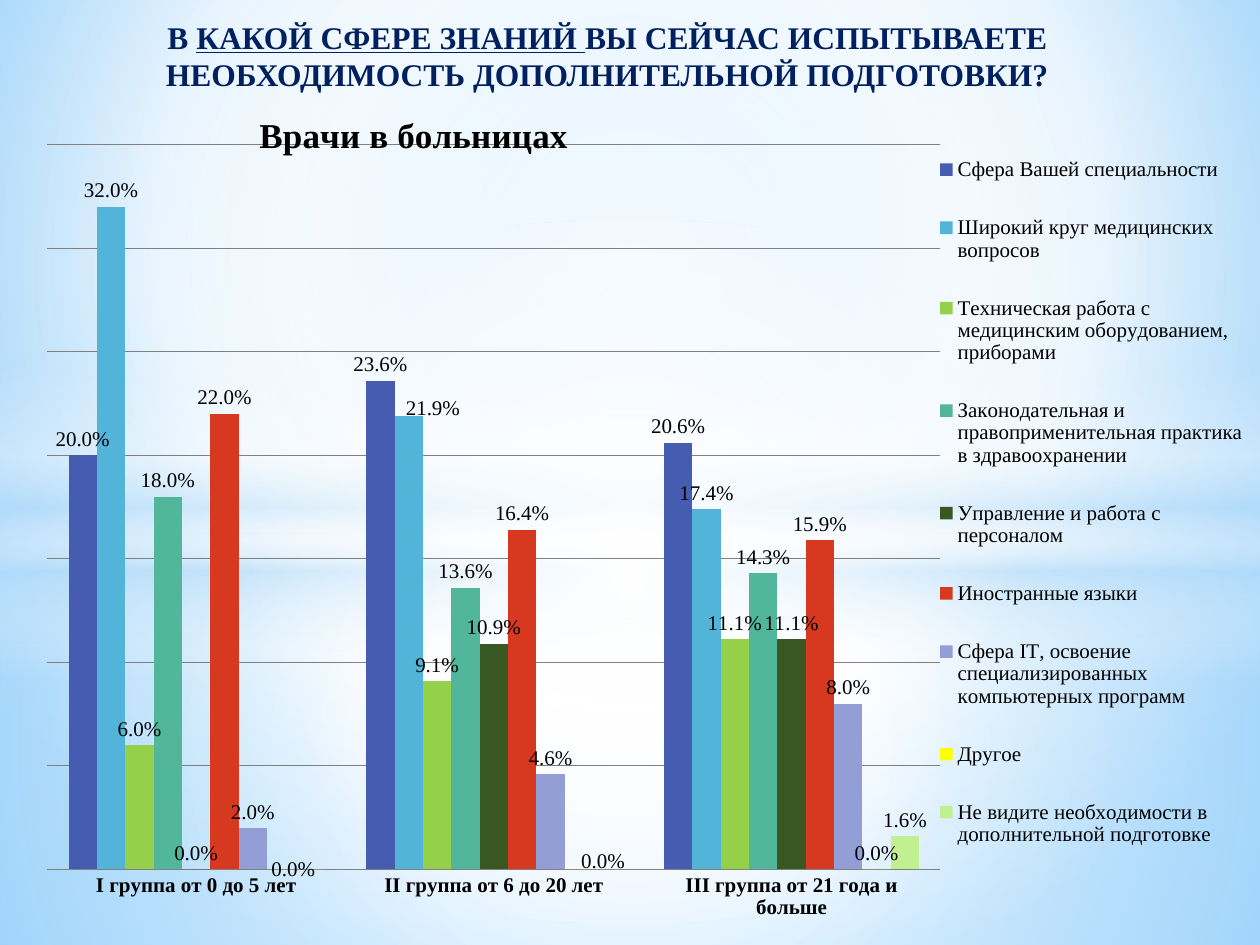
from lxml.etree import SubElement
from pptx import Presentation
from pptx.chart.data import CategoryChartData
from pptx.dml.color import RGBColor
from pptx.enum.chart import XL_CHART_TYPE, XL_LABEL_POSITION, XL_LEGEND_POSITION, XL_TICK_MARK
from pptx.enum.shapes import MSO_SHAPE
from pptx.enum.text import PP_ALIGN
from pptx.oxml import parse_xml
from pptx.oxml.ns import nsdecls, qn
from pptx.util import Cm, Pt

FONT = "Times New Roman"
NAVY, BLACK, GREY = "002060", "000000", "808080"
WHITE, PALE_BLUE = "FFFFFF", "B4DCFA"

CATEGORIES = ["I группа от 0 до 5 лет", "II группа от 6 до 20 лет", "III группа от 21 года и больше"]
SERIES = [
    ("Сфера Вашей специальности", "465CB1", (0.2, 0.236, 0.206)),
    ("Широкий круг медицинских вопросов", "52B4D8", (0.32, 0.219, 0.174)),
    ("Техническая работа с медицинским оборудованием, приборами", "94D04A", (0.06, 0.091, 0.111)),
    ("Законодательная и правоприменительная практика в здравоохранении", "52B69A", (0.18, 0.136, 0.143)),
    ("Управление и работа с персоналом", "385723", (0, 0.109, 0.111)),
    ("Иностранные языки", "D73820", (0.22, 0.164, 0.159)),
    ("Сфера IT, освоение специализированных компьютерных программ", "939DD6", (0.02, 0.046, 0.08)),
    ("Другое", "FFFF00", (0, 0, 0)),
    ("Не видите необходимости в дополнительной подготовке", "C1F090", (0, 0, 0.016)),
]
# (series, category): shift as a share of the chart size
MOVED_LABELS = {(1, 1): (0.02, 0.01), (7, 0): (0.01, 0.02), (7, 1): (0.02, 0.01)}
HIDDEN_LABELS = [(8, 0), (8, 1)]


def color(hex_string):
    return RGBColor.from_string(hex_string)


def format_font(font, size=12, hex_color=BLACK, bold=False, underline=None):
    font.name, font.size, font.bold, font.underline = FONT, Pt(size), bold, underline
    font.color.rgb = color(hex_color)


def add_text(paragraph, text, **font_format):
    run = paragraph.add_run()
    run.text = text
    format_font(run.font, **font_format)


def set_gradient(properties, stops, center=None):
    """Swap the solid fill for a gradient: radial around center, else top to bottom."""
    stop_xml = "".join(
        f'<a:gs pos="{position * 1000}"><a:srgbClr val="{hex_color}">'
        f'<a:alpha val="{opacity * 1000}"/></a:srgbClr></a:gs>'
        for position, hex_color, opacity in stops)
    if center:
        sides = " ".join(f'{side}="{share * 1000}"' for side, share in zip("ltrb", center))
        direction = f'<a:path path="circle"><a:fillToRect {sides}/></a:path>'
    else:
        direction = '<a:lin ang="5400000" scaled="0"/>'
    solid_fill = properties.find(qn("a:solidFill"))
    properties.replace(solid_fill, parse_xml(
        f'<a:gradFill {nsdecls("a")} rotWithShape="1"><a:gsLst>{stop_xml}</a:gsLst>{direction}</a:gradFill>'))


def set_layout(element, index, **values):
    """Give a chart part a manual layout, placed as child number index."""
    for old_layout in element.findall(qn("c:layout")):
        element.remove(old_layout)
    layout = parse_xml(f'<c:layout {nsdecls("c")}><c:manualLayout/></c:layout>')
    for name, value in values.items():
        SubElement(layout[0], qn(f"c:{name}")).set("val", str(value))
    element.insert(index, layout)


class SlideBuilder:
    def __init__(self, presentation):
        self.slide = presentation.slides.add_slide(presentation.slide_layouts[6])

    def background(self, stops, center):
        self.slide.background.fill.solid()
        set_gradient(self.slide.background._element.find(f".//{qn('p:bgPr')}"), stops, center)

    def glow(self, kind, top, height, stops, center=None):
        shape = self.slide.shapes.add_shape(kind, 0, Cm(top), Cm(25.4), Cm(height))
        shape.shadow.inherit = False
        shape.line.fill.background()
        shape.fill.solid()
        set_gradient(shape._element.spPr, stops, center)

    def heading(self, left, top, width, height, parts):
        frame = self.slide.shapes.add_textbox(Cm(left), Cm(top), Cm(width), Cm(height)).text_frame
        frame.word_wrap = True
        paragraph = frame.paragraphs[0]
        paragraph.alignment = PP_ALIGN.CENTER
        for text, underline in parts:
            add_text(paragraph, text, size=18, hex_color=NAVY, bold=True, underline=underline)

    def column_chart(self, left, top, width, height, title):
        data = CategoryChartData(number_format="0.0%")
        data.categories = CATEGORIES
        for name, _, values in SERIES:
            data.add_series(name, values)
        chart = self.slide.shapes.add_chart(
            XL_CHART_TYPE.COLUMN_CLUSTERED, Cm(left), Cm(top), Cm(width), Cm(height), data).chart
        format_font(chart.font)
        add_text(chart.chart_title.text_frame.paragraphs[0], title, size=20, bold=True)
        set_layout(chart.chart_title._element, 1, xMode="edge", yMode="edge", x=0.17, y=0.01)
        set_layout(chart._chartSpace.chart.plotArea, 0, layoutTarget="inner", xMode="edge", yMode="edge",
                   x=0, y=0.057, w=0.738, h=0.888)
        self.axes(chart)
        self.legend(chart)
        plot = chart.plots[0]
        plot.gap_width, plot.overlap, plot.vary_by_categories = 150, 0, False
        for series, (_, hex_color, _) in zip(plot.series, SERIES):
            series.format.fill.solid()
            series.format.fill.fore_color.rgb = color(hex_color)
            labels = series.data_labels
            labels.show_value = True
            labels.position = XL_LABEL_POSITION.OUTSIDE_END
            labels.number_format, labels.number_format_is_linked = "0.0%", False
        for (series_index, point_index), (x, y) in MOVED_LABELS.items():
            set_layout(self.point_label(plot, series_index, point_index), 1, x=x, y=y)
        for series_index, point_index in HIDDEN_LABELS:
            label = self.point_label(plot, series_index, point_index)
            for child in label[1:]:
                label.remove(child)
            SubElement(label, qn("c:delete")).set("val", "1")

    def axes(self, chart):
        value_axis, category_axis = chart.value_axis, chart.category_axis
        value_axis.minimum_scale, value_axis.maximum_scale, value_axis.major_unit = 0, 0.35, 0.05
        value_axis.visible = False
        value_axis.has_major_gridlines = True
        format_font(category_axis.tick_labels.font, bold=True)
        category_axis.major_tick_mark = XL_TICK_MARK.NONE
        for line in (value_axis.major_gridlines.format.line, category_axis.format.line):
            line.color.rgb = color(GREY)
            line.width = Pt(0.75)

    def legend(self, chart):
        chart.has_legend = True
        chart.legend.position = XL_LEGEND_POSITION.RIGHT
        chart.legend.include_in_layout = False
        format_font(chart.legend.font)
        set_layout(chart.legend._element, 1, xMode="edge", yMode="edge", x=0.75, y=0.03, w=0.25, h=0.93)

    def point_label(self, plot, series_index, point_index):
        """Return the XML element of one point's own label."""
        series = plot.series[series_index]
        series.points[point_index].data_label.position = XL_LABEL_POSITION.OUTSIDE_END
        return series._element.xpath(f"c:dLbls/c:dLbl[c:idx/@val='{point_index}']")[0]


def main():
    presentation = Presentation()
    presentation.slide_width, presentation.slide_height = Cm(25.4), Cm(19.05)
    builder = SlideBuilder(presentation)
    middle = (50, 50, 50, 50)
    builder.background([(0, "9ED5FF", 100), (60, WHITE, 100), (100, "5BB9FF", 100)], (20, 10, 20, 60))
    builder.glow(MSO_SHAPE.RECTANGLE, 10.74, 8.31,
                 [(0, WHITE, 91), (37, WHITE, 76), (100, PALE_BLUE, 79)], middle)
    builder.glow(MSO_SHAPE.RECTANGLE, 0, 10.74,
                 [(0, WHITE, 89), (48, WHITE, 62), (100, PALE_BLUE, 79)], middle)
    builder.glow(MSO_SHAPE.RECTANGLE, 7.37, 6.35,
                 [(0, WHITE, 0), (29, WHITE, 30), (45, PALE_BLUE, 40),
                  (55, WHITE, 26), (65, PALE_BLUE, 60), (100, WHITE, 0)])
    builder.glow(MSO_SHAPE.OVAL, 4.45, 14.17, [(0, WHITE, 100), (54, WHITE, 0)], middle)
    builder.heading(1.5, 0.23, 21.49, 1.8, [
        ("В ", False),
        ("КАКОЙ СФЕРЕ ЗНАНИЙ ", True),
        ("ВЫ СЕЙЧАС ИСПЫТЫВАЕТЕ НЕОБХОДИМОСТЬ ДОПОЛНИТЕЛЬНОЙ ПОДГОТОВКИ?", False)])
    builder.column_chart(0.94, 1.98, 24.41, 16.54, "Врачи в больницах")
    presentation.save("out.pptx")


if __name__ == "__main__":
    main()
